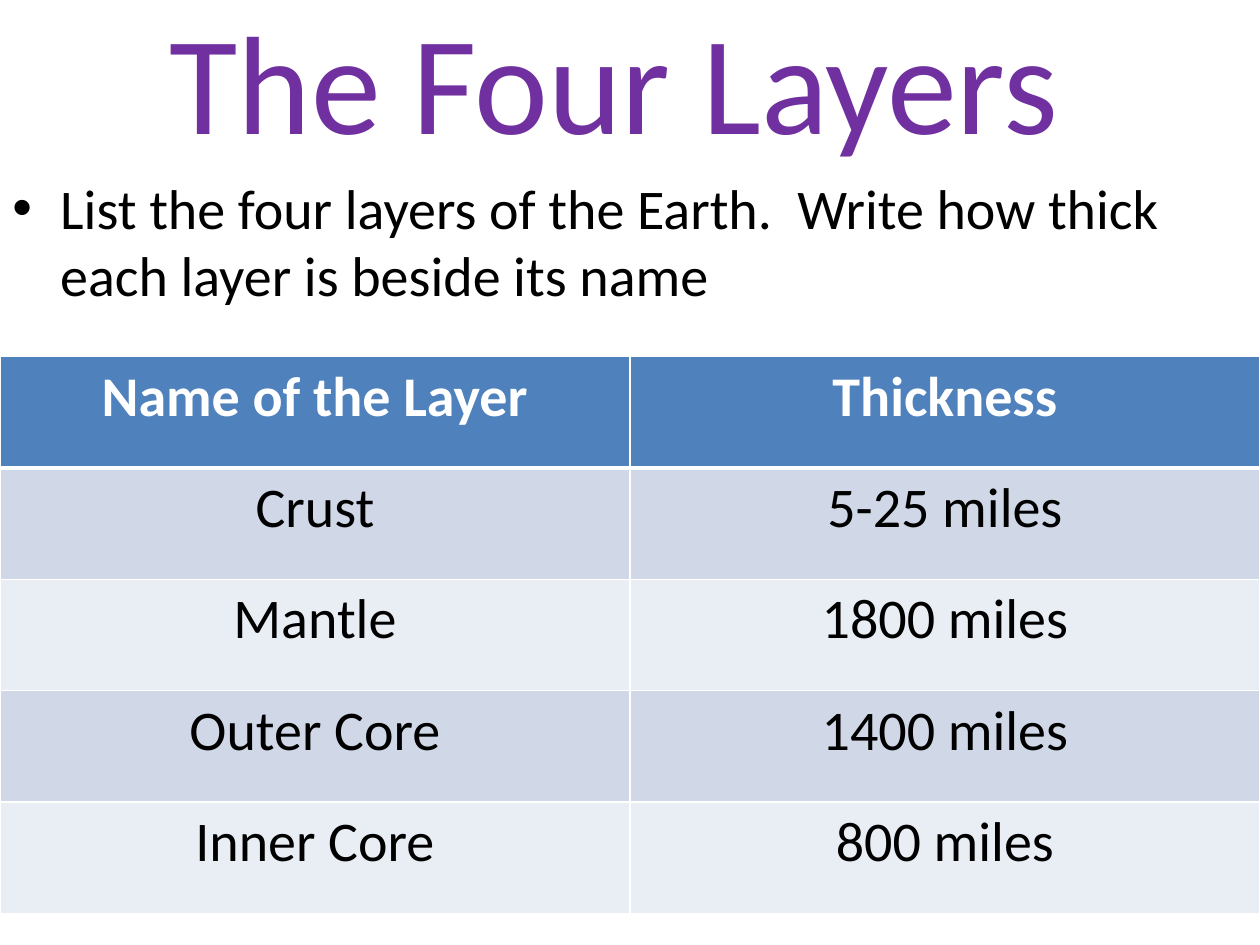
from dataclasses import dataclass

import pptx
import pptx.dml.color
import pptx.enum.text
import pptx.oxml
import pptx.oxml.ns
import pptx.util
from pptx.util import Inches

Align = pptx.enum.text.PP_ALIGN
Anchor = pptx.enum.text.MSO_ANCHOR


@dataclass(frozen=True)
class Theme:
    font: str = "Calibri"
    title_size: float = 80
    text_size: float = 32
    title: str = "7030A0"
    text: str = "000000"
    header_text: str = "FFFFFF"
    header_fill: str = "4F81BD"
    band_fills: tuple[str, str] = ("D0D8E8", "E9EDF4")
    border: str = "FFFFFF"
    border_width: float = 1
    header_rule: float = 3


@dataclass(frozen=True)
class Layer:
    name: str
    thickness: str


THEME = Theme()
LAYERS = (
    Layer("Crust", "5-25 miles"),
    Layer("Mantle", "1800 miles"),
    Layer("Outer Core", "1400 miles"),
    Layer("Inner Core", "800 miles"),
)


def write_text(frame, text: str, *, size: float = THEME.text_size,
               color: str = THEME.text, bold: bool = False, align=Align.CENTER):
    para = frame.paragraphs[0]
    para.alignment = align
    span = para.add_run()
    span.text = text
    span.font.name = THEME.font
    span.font.size = pptx.util.Pt(size)
    span.font.bold = bold
    span.font.color.rgb = pptx.dml.color.RGBColor.from_string(color)
    return para


def add_bullet(para, indent: float) -> None:
    """Give the paragraph a round bullet with a hanging indent in inches."""
    properties = para._p.get_or_add_pPr()
    properties.set("marL", str(Inches(indent)))
    properties.set("indent", str(-Inches(indent)))
    namespaces = pptx.oxml.ns.nsdecls("a")
    properties.append(pptx.oxml.parse_xml(f'<a:buFont {namespaces} typeface="Arial"/>'))
    properties.append(pptx.oxml.parse_xml(f'<a:buChar {namespaces} char="•"/>'))


def set_borders(cell, *, top: float, bottom: float) -> None:
    """Draw the four cell edges, with top and bottom widths in points."""
    properties = cell._tc.get_or_add_tcPr()
    widths = {"lnL": THEME.border_width, "lnR": THEME.border_width,
              "lnT": top, "lnB": bottom}
    for edge, width in widths.items():
        properties.append(pptx.oxml.parse_xml(
            f'<a:{edge} {pptx.oxml.ns.nsdecls("a")} w="{pptx.util.Pt(width)}">'
            f'<a:solidFill><a:srgbClr val="{THEME.border}"/></a:solidFill>'
            f'</a:{edge}>'))


def place_title(page, text: str) -> None:
    title = page.shapes.title
    title.left, title.top = Inches(0), Inches(0)
    title.width, title.height = Inches(10), Inches(1.25)
    frame = title.text_frame
    frame.auto_size = pptx.enum.text.MSO_AUTO_SIZE.NONE
    frame.vertical_anchor = Anchor.MIDDLE
    write_text(frame, text, size=THEME.title_size, color=THEME.title)


def add_instruction(page, text: str) -> None:
    box = page.shapes.add_textbox(Inches(0), Inches(1.33), Inches(10), Inches(4.95))
    box.text_frame.word_wrap = True
    para = write_text(box.text_frame, text, align=Align.LEFT)
    para.space_before = pptx.util.Pt(0.2 * THEME.text_size)
    add_bullet(para, 0.38)


def add_layer_table(page, layers: tuple[Layer, ...]) -> None:
    rows = [("Name of the Layer", "Thickness")]
    rows += [(layer.name, layer.thickness) for layer in layers]
    table = page.shapes.add_table(len(rows), 2, Inches(0), Inches(2.83),
                                  Inches(10), Inches(4.42)).table
    for row_index, texts in enumerate(rows):
        is_header = row_index == 0
        fill = THEME.header_fill if is_header else THEME.band_fills[(row_index - 1) % 2]
        for column_index, text in enumerate(texts):
            cell = table.cell(row_index, column_index)
            set_borders(
                cell,
                top=THEME.header_rule if row_index == 1 else THEME.border_width,
                bottom=THEME.header_rule if is_header else THEME.border_width)
            cell.fill.solid()
            cell.fill.fore_color.rgb = pptx.dml.color.RGBColor.from_string(fill)
            write_text(cell.text_frame, text, bold=is_header,
                       color=THEME.header_text if is_header else THEME.text)


def main() -> None:
    deck = pptx.Presentation()
    deck.slide_width, deck.slide_height = Inches(10), Inches(7.5)
    page = deck.slides.add_slide(deck.slide_layouts.get_by_name("Title Only"))
    place_title(page, "The Four Layers ")
    add_instruction(page, "List the four layers of the Earth.  Write how thick "
                          "each layer is beside its name")
    add_layer_table(page, LAYERS)
    deck.save("out.pptx")


if __name__ == "__main__":
    main()
